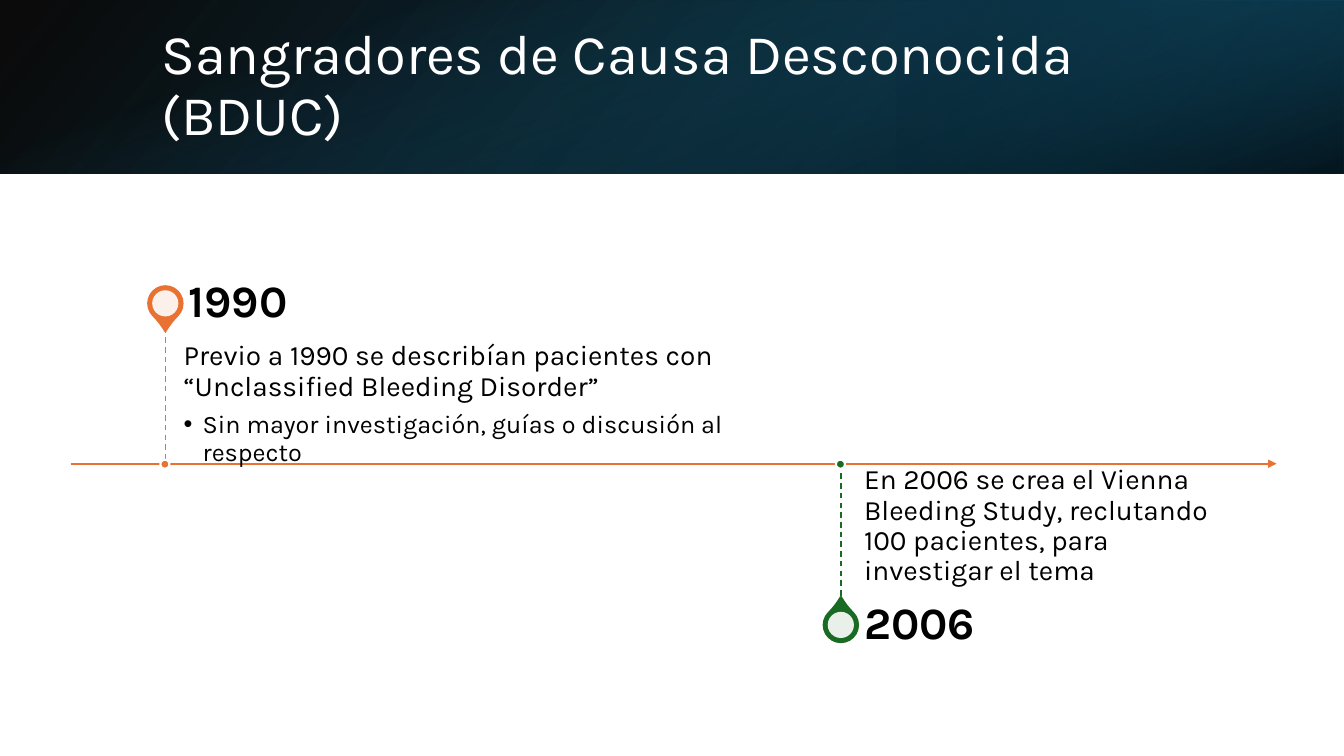
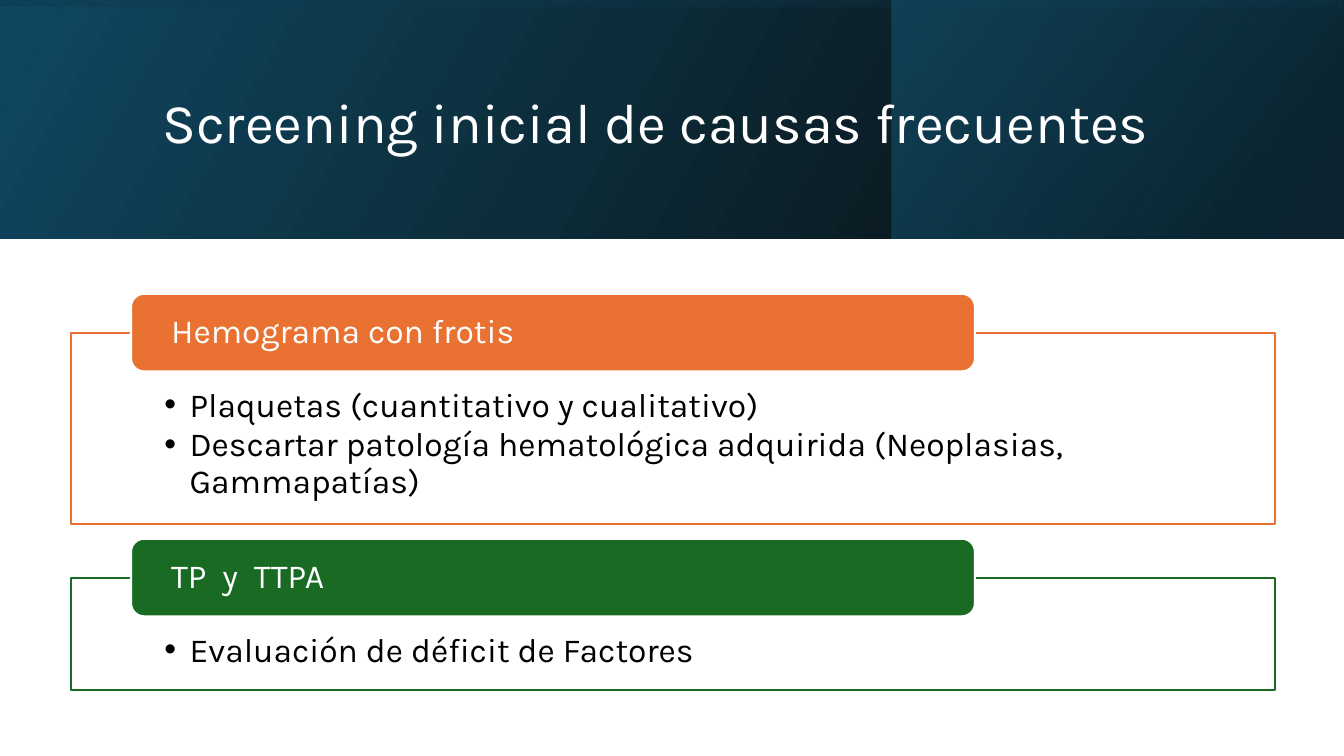
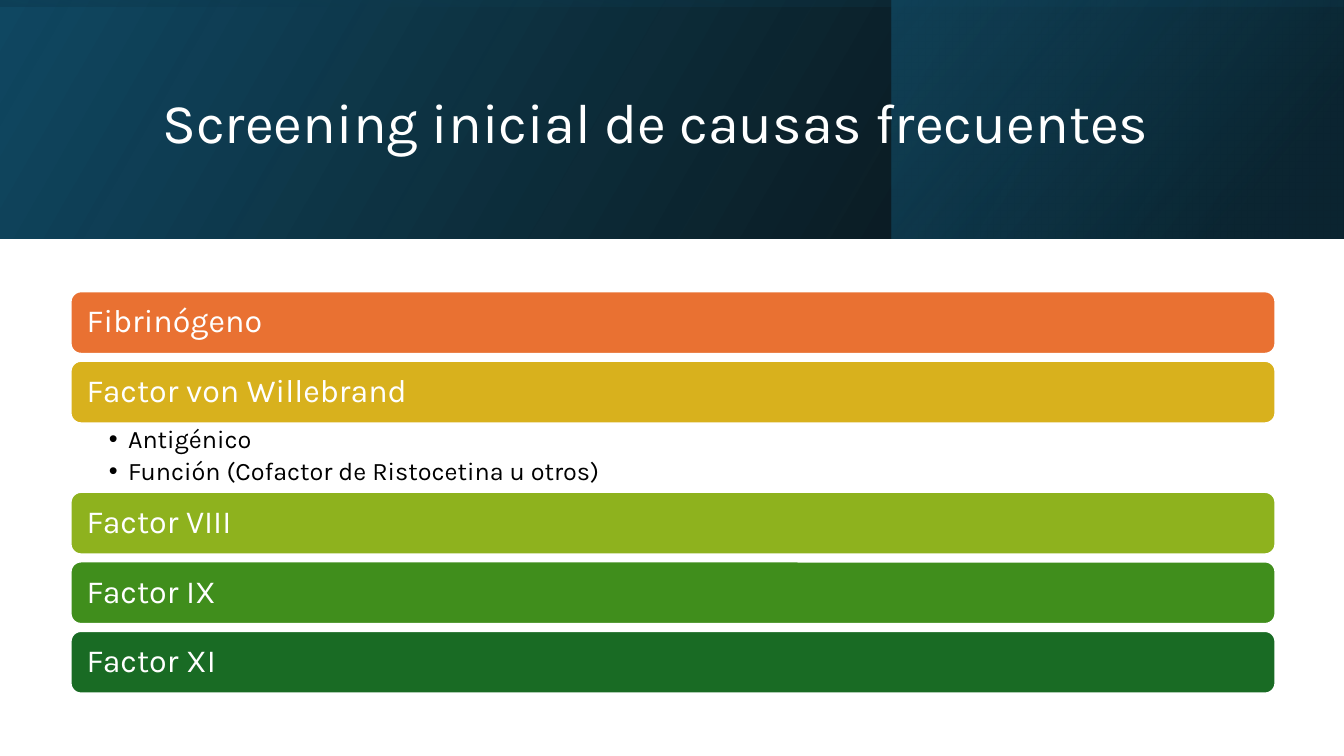
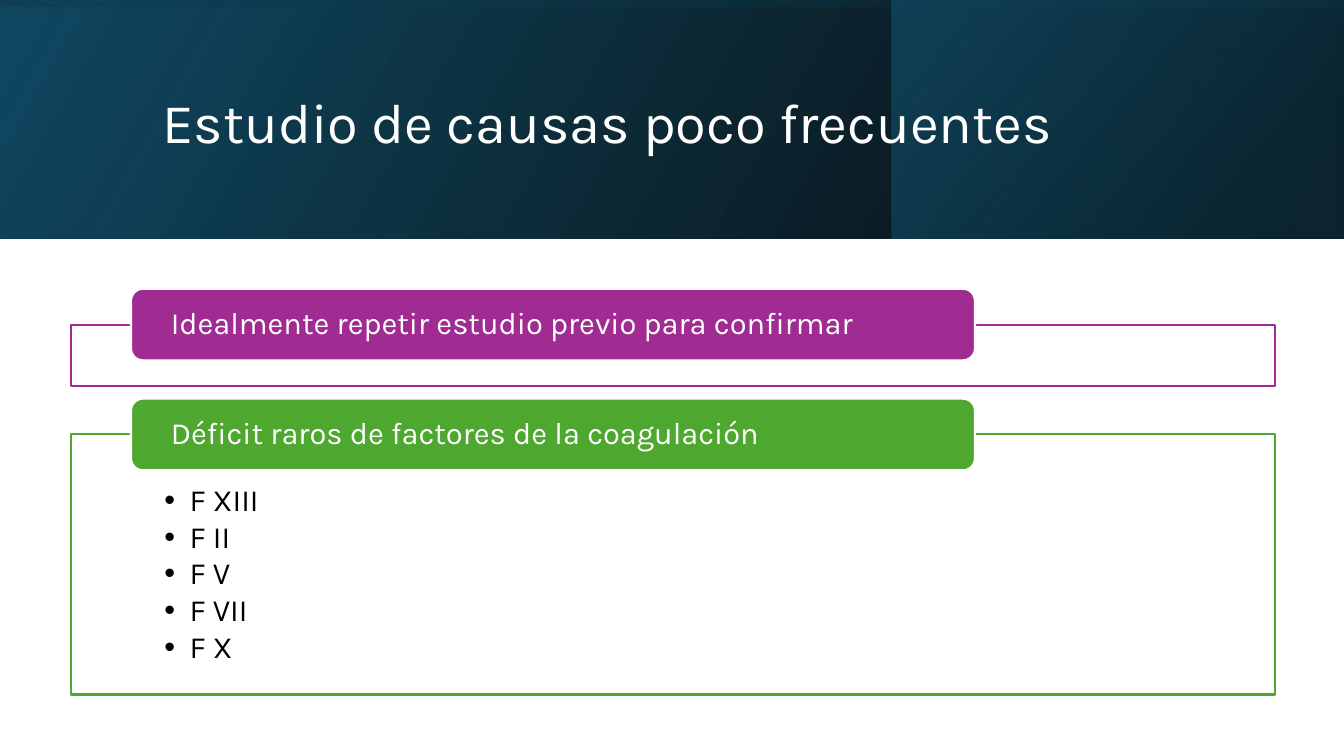
from dataclasses import dataclass
from typing import Any

from lxml.etree import SubElement
from pptx import Presentation
from pptx.dml.color import RGBColor
from pptx.enum.dml import MSO_LINE
from pptx.enum.shapes import MSO_CONNECTOR, MSO_SHAPE
from pptx.enum.text import MSO_ANCHOR, MSO_AUTO_SIZE, PP_ALIGN
from pptx.oxml.ns import qn
from pptx.util import Inches, Pt

FONT = "Karla"
WIDE, HIGH = 13.33, 7.5
LEFT, SPAN = 0.7, 11.95
HUES = {
    "white": "FFFFFF",
    "black": "000000",
    "navy": "104862",
    "deep": "0B3041",
    "teal": "156082",
    "orange": "E97132",
    "gold": "D8B11D",
    "lime": "8EB21E",
    "leaf": "408E1C",
    "green": "196B24",
    "plum": "A02B93",
    "grass": "4EA72E",
}
Box = tuple[float, float, float, float]
Stop = tuple[int, str, int]


@dataclass(frozen=True)
class Band:
    box: Box
    stops: tuple[Stop, Stop]
    slant: int
    turn: int = 0
    flip: bool = True


@dataclass(frozen=True)
class Card:
    top: float
    high: float
    hue: str
    head: str
    items: tuple[str, ...] = ()


@dataclass(frozen=True)
class Bar:
    text: str
    hue: str
    items: tuple[str, ...] = ()


@dataclass(frozen=True)
class Event:
    mid: float
    pin: float
    hue: str
    turn: int
    stem: tuple[float, float]
    year: str
    spot: tuple[float, float]


BASE = ((0, "black", 96), (100, "navy", 100))
TALL = (
    Band((0, 0, WIDE, 2.37), BASE, 330),
    Band((8.84, 0, 4.48, 2.37), ((19, "deep", 68), (100, "teal", 48)), 320),
    Band((5.48, -5.48, 2.37, WIDE), ((23, "navy", 16), (99, "black", 45)), 350, 270),
)
SHORT = (
    Band((0, 0, WIDE, 1.72), BASE, 140),
    Band((8.89, 0, 4.44, 1.72), ((19, "deep", 68), (100, "teal", 79)), 320, 180),
    Band((5.8, -5.8, 1.72, WIDE), ((23, "teal", 0), (99, "black", 74)), 340, 90, False),
)


def tint(name: str) -> RGBColor:
    return RGBColor.from_string(HUES[name])


def place(shape: Any, box: Box) -> None:
    shape.left, shape.top, shape.width, shape.height = map(Inches, box)


def fade(node: Any, share: int) -> None:
    SubElement(node, qn("a:alpha"), val=str(share * 1000))


def draw(slide: Any, kind: Any, box: Box, fill: str = "", edge: str = "", share: int = 100) -> Any:
    shape = slide.shapes.add_shape(kind, *map(Inches, box))
    shape.shadow.inherit = False
    if fill:
        shape.fill.solid()
        shape.fill.fore_color.rgb = tint(fill)
        if share < 100:
            fade(next(shape.element.spPr.iter(qn("a:srgbClr"))), share)
    if edge:
        shape.line.color.rgb = tint(edge)
        shape.line.width = Pt(1.5)
    else:
        shape.line.fill.background()
    return shape


def blend(slide: Any, band: Band) -> None:
    shape = draw(slide, MSO_SHAPE.RECTANGLE, band.box)
    shape.rotation = band.turn
    props = shape.element.spPr
    if band.flip:
        props.find(qn("a:xfrm")).set("flipH", "1")
    grad = SubElement(props, qn("a:gradFill"), rotWithShape="1")
    props.find(qn("a:prstGeom")).addnext(grad)
    stops = SubElement(grad, qn("a:gsLst"))
    for spot, hue, share in band.stops:
        stop = SubElement(stops, qn("a:gs"), pos=str(spot * 1000))
        fade(SubElement(stop, qn("a:srgbClr"), val=HUES[hue]), share)
    SubElement(grad, qn("a:lin"), ang=str(band.slant * 60000), scaled="0")


def link(slide: Any, start: tuple[float, float], end: tuple[float, float], hue: str,
         width: float, dash: bool = False, arrow: bool = False) -> None:
    line = slide.shapes.add_connector(MSO_CONNECTOR.STRAIGHT, *map(Inches, (*start, *end)))
    line.line.color.rgb = tint(hue)
    line.line.width = Pt(width)
    if dash:
        line.line.dash_style = MSO_LINE.DASH
    props = line.element.spPr
    if arrow:
        SubElement(props.find(qn("a:ln")), qn("a:tailEnd"), type="triangle")
    SubElement(props, qn("a:effectLst"))


def frame(shape: Any, inset: Box, anchor: Any = MSO_ANCHOR.MIDDLE) -> Any:
    body = shape.text_frame
    body.word_wrap = True
    body.auto_size = MSO_AUTO_SIZE.NONE
    body.vertical_anchor = anchor
    body.margin_left, body.margin_top, body.margin_right, body.margin_bottom = map(Inches, inset)
    return body


def write(body: Any, text: str, *, size: float, hue: str = "black", bold: bool = False,
          after: float = 0, indent: float = 0) -> None:
    para = body.paragraphs[0] if not body.text else body.add_paragraph()
    para.alignment = PP_ALIGN.LEFT
    para.line_spacing = 0.9
    para.space_before = Pt(0)
    para.space_after = Pt(after)
    props = para._p.get_or_add_pPr()
    props.set("marL", str(Inches(indent)))
    props.set("indent", str(-Inches(indent)))
    if indent:
        SubElement(props, qn("a:buFont"), typeface="Arial")
        SubElement(props, qn("a:buChar"), char="•")
    else:
        SubElement(props, qn("a:buNone"))
    run = para.add_run()
    run.text = text
    run.font.name = FONT
    run.font.size = Pt(size)
    run.font.bold = bold
    run.font.color.rgb = tint(hue)


def raise_up(shape: Any) -> None:
    shape.element.getparent().append(shape.element)


def fill_list(slide: Any, slot: int, box: Box, inset: Box, anchor: Any = MSO_ANCHOR.TOP) -> Any:
    shape = slide.placeholders[slot]
    place(shape, box)
    raise_up(shape)
    return frame(shape, inset, anchor)


def start(deck: Any, lists: int, title: str, bands: tuple[Band, ...], box: Box) -> Any:
    slide = deck.slides.add_slide(deck.slide_layouts[1 if lists == 1 else 3])
    for band in bands:
        blend(slide, band)
    head = slide.shapes.title
    place(head, box)
    raise_up(head)
    write(frame(head, (0.1, 0.05, 0.1, 0.05)), title, size=40, hue="white")
    return slide


def plain(deck: Any, lists: int, title: str) -> Any:
    return start(deck, lists, title, TALL, (1.51, 0.38, 10.63, 1.72))


def mark(slide: Any, event: Event, axis: float) -> None:
    drop = draw(slide, MSO_SHAPE.TEAR, (event.mid - 0.17, event.pin - 0.17, 0.34, 0.34),
                event.hue, event.hue)
    drop.adjustments[0] = 1.15
    drop.rotation = event.turn
    draw(slide, MSO_SHAPE.OVAL, (event.mid - 0.13, event.pin - 0.13, 0.26, 0.26),
         "white", share=90)
    label = slide.shapes.add_textbox(*map(Inches, (*event.spot, 3.78, 0.48)))
    write(frame(label, (0, 0, 0.22, 0)), event.year, size=32, bold=True)
    low, high = event.stem
    link(slide, (event.mid, low), (event.mid, high), event.hue, 1, dash=True)
    draw(slide, MSO_SHAPE.OVAL, (event.mid - 0.05, axis - 0.04, 0.09, 0.09), event.hue, "white")


def stack(slide: Any, cards: tuple[Card, ...], size: float, tall: float, drop: float) -> None:
    slot = 1
    for card in cards:
        box = (LEFT, card.top, SPAN, card.high)
        draw(slide, MSO_SHAPE.RECTANGLE, box, "white", card.hue, 90)
        if card.items:
            body = fill_list(slide, slot, box, (0.93, drop, 0.93, 0.17))
            slot += 1
            for item in card.items:
                write(body, item, size=size, after=2.5, indent=0.25)
        tab = draw(slide, MSO_SHAPE.ROUNDED_RECTANGLE,
                   (1.3, card.top - tall / 2, 8.37, tall), card.hue, "white")
        write(frame(tab, (0.36, 0, 0.36, 0)), card.head, size=size, hue="white")


def history(deck: Any) -> None:
    slide = start(deck, 2, "Sangradores de Causa Desconocida (BDUC)", SHORT,
                  (1.5, 0.38, 10.98, 0.96))
    axis = 4.6
    link(slide, (LEFT, axis), (12.66, axis), "orange", 1.5, arrow=True)
    events = (
        Event(1.64, 3.01, "orange", 135, (3.25, axis), "1990", (1.87, 2.77)),
        Event(8.34, 6.2, "green", 315, (axis, 5.96), "2006", (8.57, 5.96)),
    )
    for event in events:
        mark(slide, event, axis)
    past = fill_list(slide, 1, (1.82, 3.25, 6.11, 1.36), (0, 0.14, 0, 0.21))
    write(past, "Previo a 1990 se describían pacientes con “Unclassified Bleeding Disorder”",
          size=20, after=7)
    write(past, "Sin mayor investigación, guías o discusión al respecto",
          size=18, after=2.5, indent=0.19)
    study = fill_list(slide, 2, (8.57, axis, 3.78, 1.36), (0, 0.21, 0.14, 0.14),
                      MSO_ANCHOR.BOTTOM)
    write(study, "En 2006 se crea el Vienna Bleeding Study, reclutando 100 pacientes, "
          "para investigar el tema", size=20)


def screening(deck: Any) -> None:
    slide = plain(deck, 2, "Screening inicial de causas frecuentes")
    cards = (
        Card(3.3, 1.9, "orange", "Hemograma con frotis", (
            "Plaquetas (cuantitativo y cualitativo)",
            "Descartar patología hematológica adquirida (Neoplasias, Gammapatías)",
        )),
        Card(5.73, 1.12, "green", "TP  y  TTPA", ("Evaluación de déficit de Factores",)),
    )
    stack(slide, cards, 24, 0.77, 0.55)


def factors(deck: Any) -> None:
    slide = plain(deck, 1, "Screening inicial de causas frecuentes")
    bars = (
        Bar("Fibrinógeno", "orange"),
        Bar("Factor von Willebrand", "gold",
            ("Antigénico", "Función (Cofactor de Ristocetina u otros)")),
        Bar("Factor VIII", "lime"),
        Bar("Factor IX", "leaf"),
        Bar("Factor XI", "green"),
    )
    top, tall, gap, room = 2.89, 0.62, 0.07, 0.68
    for bar in bars:
        shape = draw(slide, MSO_SHAPE.ROUNDED_RECTANGLE, (LEFT, top, SPAN, tall),
                     bar.hue, "white")
        write(frame(shape, (0.13, 0.1, 0.13, 0.1)), bar.text, size=23, hue="white")
        top += tall
        if bar.items:
            body = fill_list(slide, 1, (LEFT, top, SPAN, room), (0.38, 0.03, 0.18, 0.03))
            for item in bar.items:
                write(body, item, size=18, after=3.6, indent=0.19)
            top += room
        else:
            top += gap


def rare(deck: Any) -> None:
    slide = plain(deck, 1, "Estudio de causas poco frecuentes")
    cards = (
        Card(3.22, 0.61, "plum", "Idealmente repetir estudio previo para confirmar"),
        Card(4.31, 2.58, "grass", "Déficit raros de factores de la coagulación",
             ("F XIII", "F II", "F V", "F VII", "F X")),
    )
    stack(slide, cards, 22, 0.71, 0.5)


def main() -> None:
    deck = Presentation()
    deck.slide_width, deck.slide_height = Inches(WIDE), Inches(HIGH)
    for build in (history, screening, factors, rare):
        build(deck)
    deck.save("out.pptx")


if __name__ == "__main__":
    main()
